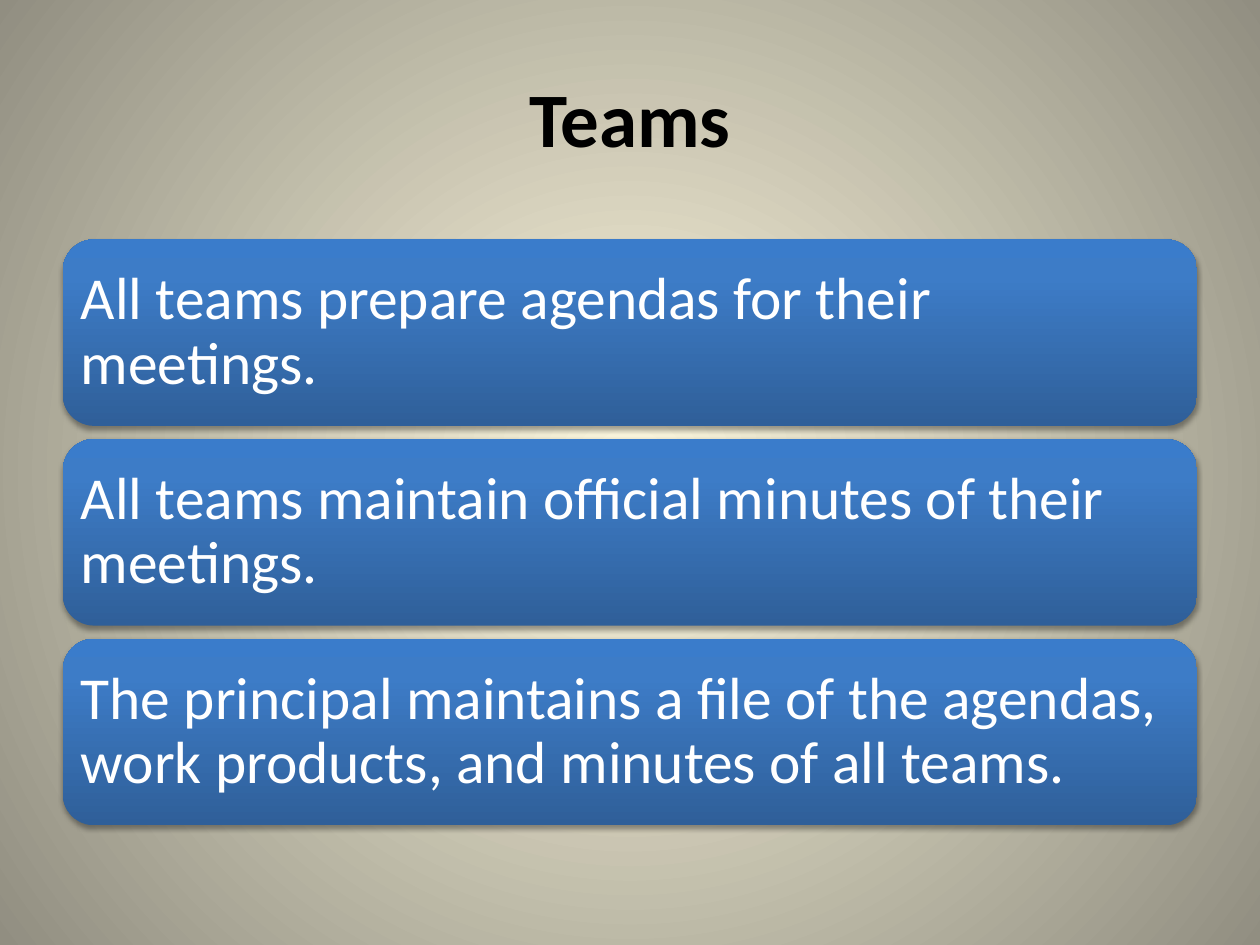
from dataclasses import dataclass

from lxml.etree import fromstring
from pptx import Presentation
from pptx.dml.color import RGBColor
from pptx.enum.shapes import MSO_SHAPE
from pptx.enum.text import MSO_ANCHOR, PP_ALIGN
from pptx.oxml.ns import nsdecls, qn
from pptx.util import Inches, Pt

LEFT, WIDE = 0.5, 9
TOP, TALL, STEP = 1.9, 1.48, 1.585
GLOW = [(0, "FCF7DD"), (100, "918E81")]
BLUE = [(0, "2F5F99"), (80, "3D7CC7"), (100, "3A7CCB")]
ROUND = (
    '<a:path {ns} path="circle">'
    '<a:fillToRect l="50000" t="50000" r="50000" b="50000"/></a:path>'
)
RISE = '<a:lin {ns} ang="16200000" scaled="0"/>'
SHADE = (
    '<a:outerShdw {ns} blurRad="{blur}" dist="{dist}" dir="5400000" rotWithShape="0">'
    '<a:srgbClr val="000000"><a:alpha val="35000"/></a:srgbClr></a:outerShdw>'
)


@dataclass
class Style:
    size: float
    color: str
    bold: bool = False
    align: PP_ALIGN = PP_ALIGN.LEFT
    lines: float = 1.0
    inset: float = 0.1


HEAD = Style(44, "000000", bold=True, align=PP_ALIGN.CENTER)
BODY = Style(34, "FFFFFF", lines=0.9, inset=0.07)
RULES = [
    "All teams prepare agendas for their meetings.",
    "All teams maintain official minutes of their meetings.",
    "The principal maintains a file of the agendas, work products, and minutes of all teams.",
]


def paint(text: str) -> RGBColor:
    return RGBColor.from_string(text)


def blend(root, stops: list, course: str) -> None:
    grad = root.find(".//" + qn("a:gradFill"))
    for child in list(grad):
        grad.remove(child)
    marks = "".join(
        f'<a:gs pos="{pos * 1000}"><a:srgbClr val="{paint(tone)}"/></a:gs>'
        for pos, tone in stops
    )
    ns = nsdecls("a")
    grad.append(fromstring(f"<a:gsLst {ns}>{marks}</a:gsLst>"))
    grad.append(fromstring(course.format(ns=ns)))


def write(shape, text: str, style: Style) -> None:
    frame = shape.text_frame
    frame.word_wrap = True
    frame.vertical_anchor = MSO_ANCHOR.MIDDLE
    frame.margin_left = frame.margin_right = Inches(style.inset)
    frame.margin_top = frame.margin_bottom = Inches(style.inset)
    line = frame.paragraphs[0]
    line.text = text
    line.alignment = style.align
    line.line_spacing = style.lines
    font = line.font
    font.name = "Calibri"
    font.size = Pt(style.size)
    font.bold = style.bold
    font.color.rgb = paint(style.color)


def panel(slide, top: float, text: str) -> None:
    shape = slide.shapes.add_shape(
        MSO_SHAPE.ROUNDED_RECTANGLE,
        Inches(LEFT), Inches(top), Inches(WIDE), Inches(TALL),
    )
    shape.line.fill.background()
    shape.fill.gradient()
    blend(shape.element.spPr, BLUE, RISE)
    shape.shadow.inherit = False
    cast = SHADE.format(ns=nsdecls("a"), blur=Pt(3.1), dist=Pt(1.8))
    shape.element.spPr.find(qn("a:effectLst")).append(fromstring(cast))
    write(shape, text, BODY)


def main() -> None:
    deck = Presentation()
    deck.slide_width, deck.slide_height = Inches(10), Inches(7.5)
    slide = deck.slides.add_slide(deck.slide_layouts[6])
    slide.background.fill.gradient()
    blend(slide.element, GLOW, ROUND)
    title = slide.shapes.add_textbox(
        Inches(LEFT), Inches(0.3), Inches(WIDE), Inches(1.25)
    )
    write(title, "Teams", HEAD)
    for row, text in enumerate(RULES):
        panel(slide, TOP + row * STEP, text)
    deck.save("out.pptx")


if __name__ == "__main__":
    main()
